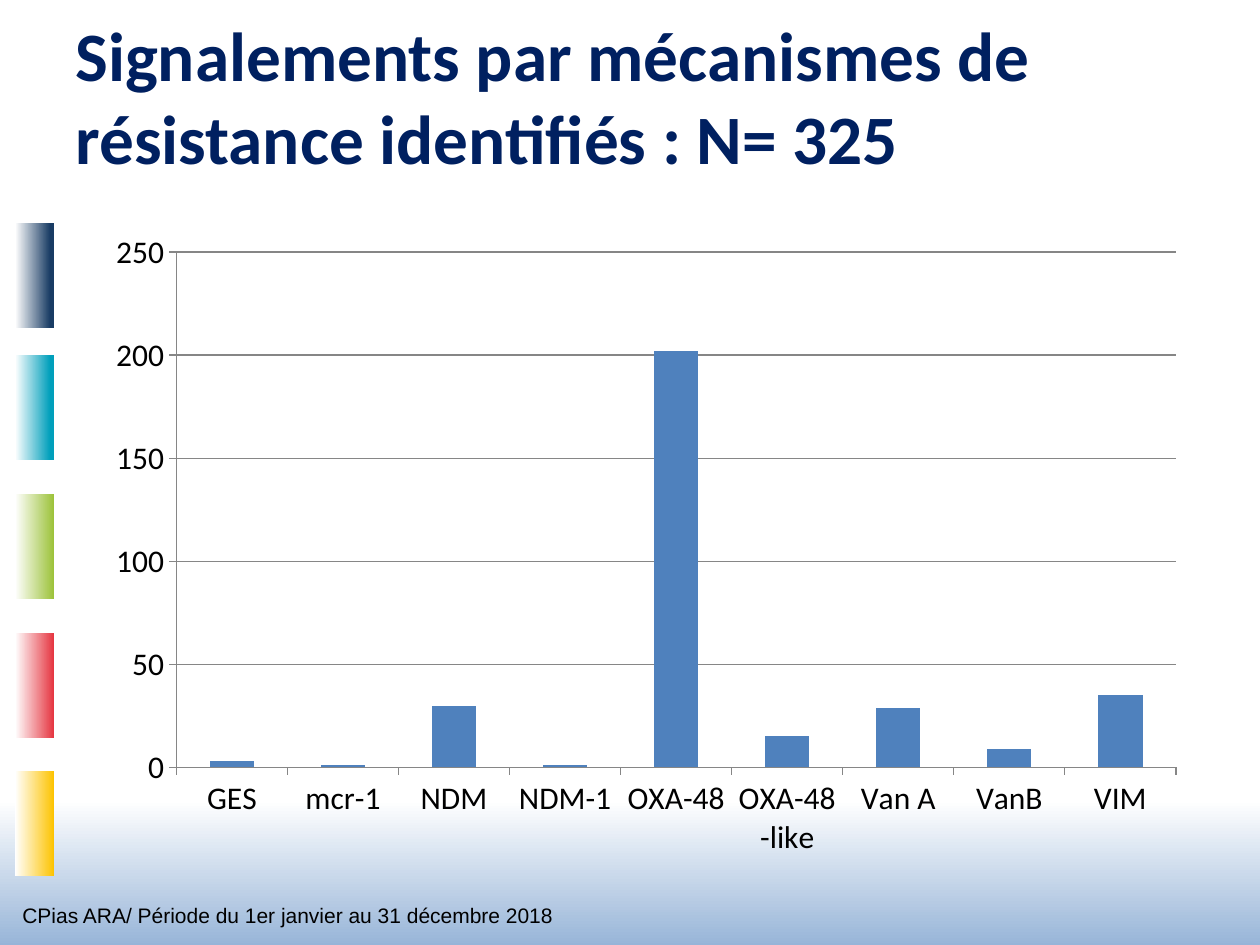
from pptx import Presentation
from pptx.chart.data import CategoryChartData
from pptx.dml.color import RGBColor
from pptx.enum.chart import XL_CHART_TYPE, XL_TICK_MARK
from pptx.enum.shapes import MSO_SHAPE
from pptx.enum.text import MSO_ANCHOR
from pptx.util import Emu, Pt

COLUMNS = XL_CHART_TYPE.COLUMN_CLUSTERED
TICK_OUT, TICK_NONE = XL_TICK_MARK.OUTSIDE, XL_TICK_MARK.NONE
RECTANGLE = MSO_SHAPE.RECTANGLE
MIDDLE, TOP = MSO_ANCHOR.MIDDLE, MSO_ANCHOR.TOP

PX_PER_INCH = 126
COLORS = {
    "white": "FFFFFF", "black": "000000", "title": "002060", "band": "95B3D7",
    "navy": "193C64", "teal": "009FBB", "green": "9CC239", "red": "E53540",
    "yellow": "FDC300", "column": "4F81BD", "axis": "868686",
}
COUNTS = {
    "GES": 3, "mcr-1": 1, "NDM": 30, "NDM-1": 1, "OXA-48": 202,
    "OXA-48-like": 15, "Van A": 29, "VanB": 9, "VIM": 35,
}


def px(length):
    return Emu(round(length * 914400 / PX_PER_INCH))


def color(name):
    return RGBColor.from_string(COLORS[name])


def add_fading_rectangle(page, box, name, rotation, start=0):
    """Fade from the named colour at the unrotated top edge to white."""
    shape = page.shapes.add_shape(RECTANGLE, *map(px, box))
    shape.shadow.inherit = False
    shape.line.fill.background()
    shape.rotation = rotation
    shape.fill.gradient()
    shape.fill.gradient_angle = 270
    first, last = shape.fill.gradient_stops
    first.color.rgb, first.position = color(name), start
    last.color.rgb, last.position = color("white"), 1


def add_side_tabs(page, box):
    """Stack the tabs in the box; each is drawn lying down, then turned upright."""
    left, top, width, height = box
    tab_length = 105
    tabs = [("navy", 0, 0.1), ("teal", 132, 0.1), ("green", 271, 0),
            ("red", 410, 0), ("yellow", height - tab_length, 0)]
    shift = (tab_length - width) / 2
    for name, offset, start in tabs:
        tab_box = (left - shift, top + offset + shift, tab_length, width)
        add_fading_rectangle(page, tab_box, name, 90, start)


def add_text(page, box, text, *, font, size, fill, bold=False, anchor=TOP):
    frame = page.shapes.add_textbox(*map(px, box)).text_frame
    frame.word_wrap = True
    frame.vertical_anchor = anchor
    span = frame.paragraphs[0].add_run()
    span.text = text
    span.font.name, span.font.size, span.font.bold = font, Pt(size), bold
    span.font.color.rgb = color(fill)


def add_count_chart(page, box):
    data = CategoryChartData()
    data.categories = list(COUNTS)
    data.add_series("Series 1", list(COUNTS.values()))
    chart = page.shapes.add_chart(COLUMNS, *map(px, box), data).chart
    chart.has_title = chart.has_legend = False
    chart.font.name, chart.font.size = "Calibri", Pt(18)
    chart.font.color.rgb = color("black")

    plot = chart.plots[0]
    plot.gap_width = 150
    plot.vary_by_categories = False
    series_fill = plot.series[0].format.fill
    series_fill.solid()
    series_fill.fore_color.rgb = color("column")

    values = chart.value_axis
    values.minimum_scale, values.maximum_scale, values.major_unit = 0, 250, 50
    values.has_major_gridlines = True
    for axis in (chart.category_axis, values):
        axis.major_tick_mark, axis.minor_tick_mark = TICK_OUT, TICK_NONE
    for part in (chart.category_axis, values, values.major_gridlines):
        part.format.line.color.rgb = color("axis")
        part.format.line.width = Pt(0.75)


def main():
    deck = Presentation()
    deck.slide_width, deck.slide_height = px(1260), px(945)
    page = deck.slides.add_slide(deck.slide_layouts[6])
    add_fading_rectangle(page, (0, 800, 1260, 149), "band", 180)
    add_side_tabs(page, (15, 223, 39, 653))
    add_text(page, (63, 16, 1134, 158),
             "Signalements par mécanismes de résistance identifiés : N= 325",
             font="Calibri", size=39.6, fill="title", bold=True, anchor=MIDDLE)
    add_count_chart(page, (94, 220, 1104, 649))
    add_text(page, (10, 896, 620, 38),
             "CPias ARA/ Période du 1er janvier au 31 décembre 2018",
             font="Arial", size=12, fill="black")
    deck.save("out.pptx")


if __name__ == "__main__":
    main()
